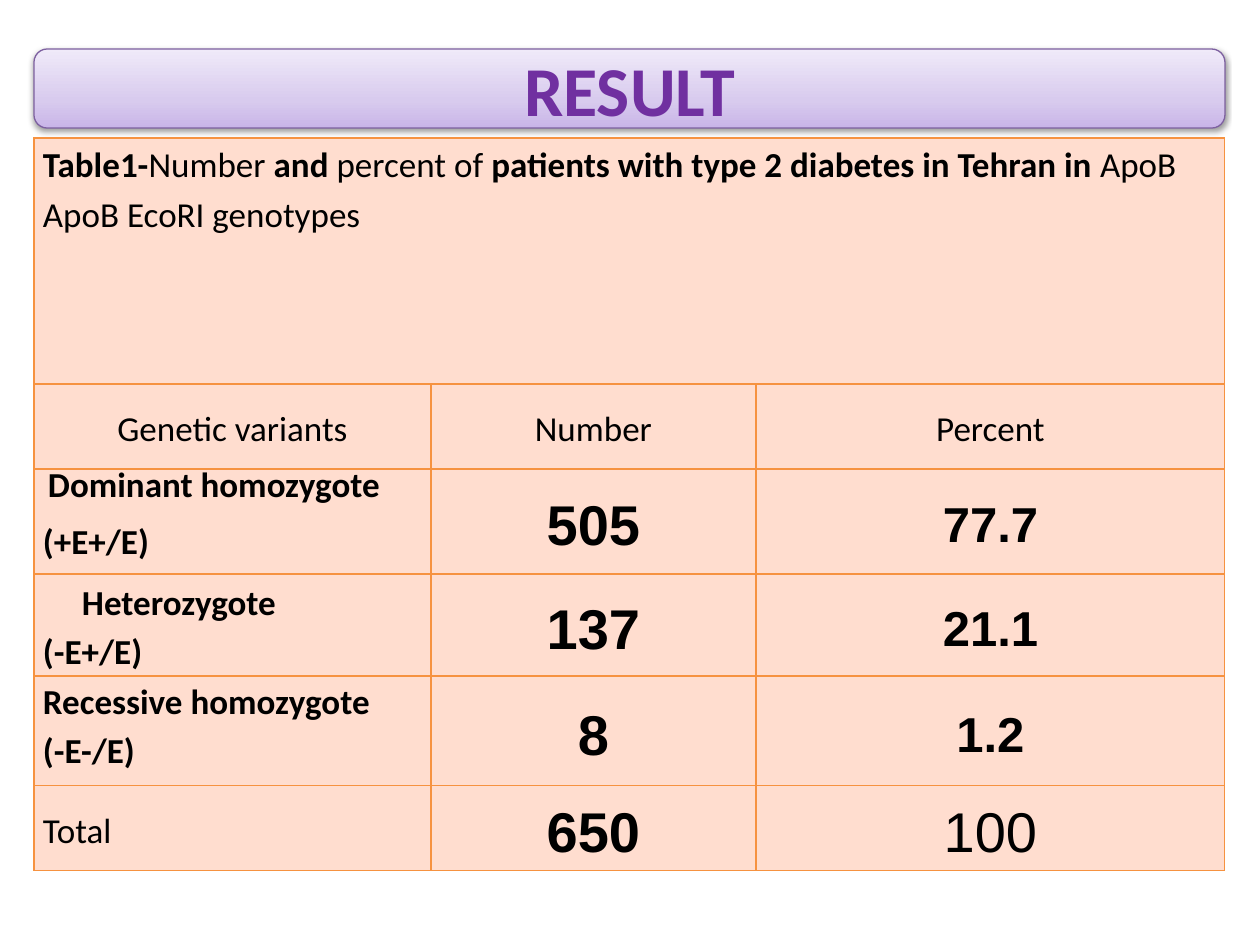
"""Build the RESULT slide with its genotype table."""
from copy import deepcopy

from lxml.etree import SubElement
from pptx import Presentation
from pptx.dml.color import RGBColor
from pptx.enum.shapes import MSO_SHAPE as Shape
from pptx.enum.text import MSO_ANCHOR as Anchor, PP_ALIGN as Align
from pptx.oxml.ns import qn
from pptx.util import Emu, Pt

FONT, DIGIT_FONT = "Calibri", "Arial"
BLACK, PURPLE, PEACH, ORANGE = "000000", "7030A0", "FFDDCF", "F69240"
LEFT, WIDTH = 34, 1191
COLUMNS = [397, 325, 469]
ROWS = [246, 85, 105, 102, 110, 85]
CAPTION = [
    ("Table1-", True), ("Number ", False), ("and ", True), ("percent of ", False),
    ("patients with type 2 diabetes in Tehran in ", True),
    ("ApoB ApoB EcoRI genotypes", False),
]
HEADINGS = ["Genetic variants", "Number", "Percent"]
VARIANTS = [
    ("Dominant homozygote", "(E+/E+)", "505", "77.7", dict(indent=5, spacing=Pt(16), after=5)),
    ("Heterozygote", "(E+/E-)", "137", "21.1", dict(indent=39)),
    ("Recessive homozygote", "(E-/E-)", "8", "1.2", dict(spacing=Pt(20))),
]


def px(length):
    return Emu(round(length * 914400 / 126))


def color(value):
    return RGBColor.from_string(value)


class SlideBuilder:
    """Holds the slide and the style shared by its elements."""

    def __init__(self, deck):
        self.slide = deck.slides.add_slide(deck.slide_layouts[6])

    def style(self, para, size=20, bold=False, ink=BLACK, rtl=False, align=Align.LEFT,
              spacing=1.15, after=0, indent=0, complex_font=FONT):
        para.alignment, para.line_spacing, para.space_after = align, spacing, Pt(after)
        properties = para._p.get_or_add_pPr()
        properties.set("marL", str(px(indent)))
        properties.set("rtl", str(int(rtl)))
        for span in para.runs:
            font = span.font
            font.name, font.size, font.bold = FONT, Pt(size), bold
            font.color.rgb = color(ink)
            SubElement(span._r.rPr, qn("a:cs"), typeface=complex_font)

    def banner(self, text, left, top, width, height, stops):
        box = self.slide.shapes.add_shape(
            Shape.ROUNDED_RECTANGLE, px(left), px(top), px(width), px(height))
        box.line.color.rgb, box.line.width = color("7D60A0"), Pt(0.75)
        box.fill.gradient()
        box.fill.gradient_angle = 90
        stop_list = box._element.spPr.find(".//" + qn("a:gsLst"))
        stop_list.append(deepcopy(stop_list[-1]))
        for stop, (position, tint) in zip(box.fill.gradient_stops, stops):
            stop.position, stop.color.rgb = position, color(tint)
        box.shadow.inherit = False
        shadow = SubElement(
            box._element.spPr.find(qn("a:effectLst")), qn("a:outerShdw"),
            blurRad=str(Pt(3.1)), dist=str(Pt(1.6)), dir="5400000", rotWithShape="0")
        shade = SubElement(shadow, qn("a:srgbClr"), val=BLACK)
        SubElement(shade, qn("a:alpha"), val="38000")
        frame = box.text_frame
        frame.text, frame.vertical_anchor = text, Anchor.MIDDLE
        self.style(frame.paragraphs[0], 40, True, PURPLE, True, Align.CENTER, 1.0)

    def table(self, left, top, columns, rows):
        table = self.slide.shapes.add_table(
            len(rows), len(columns), px(left), px(top), px(sum(columns)), px(sum(rows))).table
        table.first_row = table.horz_banding = False
        for column, width in zip(table.columns, columns):
            column.width = px(width)
        for row, height in zip(table.rows, rows):
            row.height = px(height)
        for cell in table.iter_cells():
            self.cell_style(cell)
        return table

    def cell_style(self, cell):
        properties = cell._tc.get_or_add_tcPr()
        for side in ("a:lnL", "a:lnR", "a:lnT", "a:lnB"):
            line = SubElement(properties, qn(side), w=str(Pt(0.75)))
            SubElement(SubElement(line, qn("a:solidFill")), qn("a:srgbClr"), val=ORANGE)
        cell.fill.solid()
        cell.fill.fore_color.rgb = color(PEACH)
        cell.vertical_anchor = Anchor.MIDDLE
        cell.margin_left = cell.margin_right = px(9)
        cell.margin_top = cell.margin_bottom = 0

    def caption(self, cell, spans):
        cell.vertical_anchor = Anchor.TOP
        para = cell.text_frame.paragraphs[0]
        for text, _ in spans:
            para.add_run().text = text
        self.style(para)
        for span, (_, bold) in zip(para.runs, spans):
            span.font.bold = bold

    def label(self, cell, text, **style):
        cell.text_frame.text = text
        self.style(cell.text_frame.paragraphs[0], **style)

    def number(self, cell, text, size=32, bold=True):
        self.label(cell, text, size=size, bold=bold, rtl=True, align=Align.CENTER,
                   complex_font=DIGIT_FONT)

    def variant(self, cell, name, genotype, style):
        self.label(cell, name, bold=True, **style)
        para = cell.text_frame.add_paragraph()
        para.text = genotype
        self.style(para, bold=True, rtl=True)


def main():
    deck = Presentation()
    deck.slide_width, deck.slide_height = px(1260), px(945)
    builder = SlideBuilder(deck)
    table = builder.table(LEFT, 138, COLUMNS, ROWS)
    table.cell(0, 0).merge(table.cell(0, 2))
    builder.caption(table.cell(0, 0), CAPTION)
    for column, heading in enumerate(HEADINGS):
        builder.label(table.cell(1, column), heading, rtl=True, align=Align.CENTER)
    for row, (name, genotype, count, percent, style) in enumerate(VARIANTS, 2):
        builder.variant(table.cell(row, 0), name, genotype, style)
        builder.number(table.cell(row, 1), count)
        builder.number(table.cell(row, 2), percent, size=28)
    builder.label(table.cell(5, 0), "Total", rtl=True)
    builder.number(table.cell(5, 1), "650")
    builder.number(table.cell(5, 2), "100", bold=False)
    builder.banner("RESULT", LEFT, 49, WIDTH, 79,
                   [(0, "C9B5E8"), (0.35, "D8CBEE"), (1, "F0EAF9")])
    deck.save("out.pptx")


if __name__ == "__main__":
    main()
